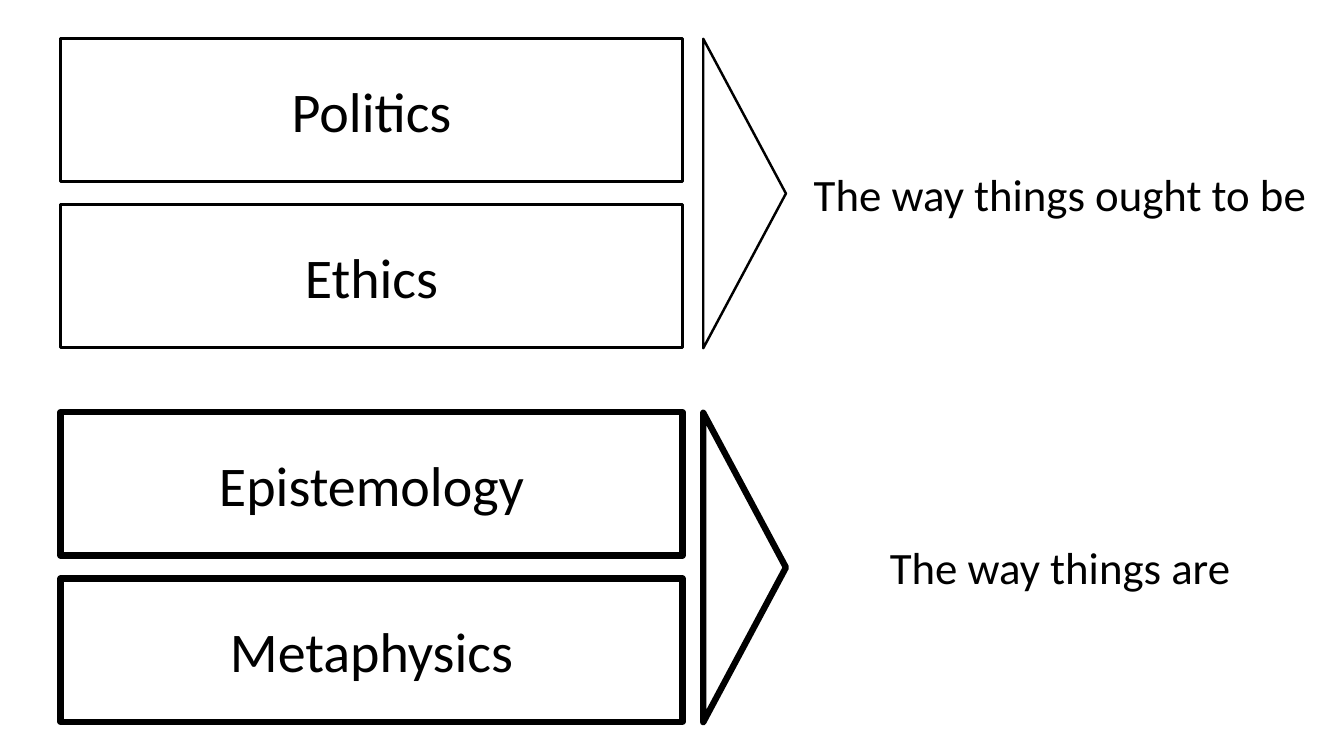
from pptx import Presentation
from pptx.dml.color import RGBColor
from pptx.enum.shapes import MSO_SHAPE
from pptx.enum.text import MSO_ANCHOR, PP_ALIGN
from pptx.util import Inches, Pt

RECT = MSO_SHAPE.RECTANGLE
TRIANGLE = MSO_SHAPE.ISOSCELES_TRIANGLE
MIDDLE, TOP = MSO_ANCHOR.MIDDLE, MSO_ANCHOR.TOP
CENTER = PP_ALIGN.CENTER

GROUPS = [
    (0.38, 1.75, ["Politics", "Ethics"], "The way things ought to be"),
    (4.09, 4.5, ["Epistemology", "Metaphysics"], "The way things are"),
]
BRANCH_STEP = 1.65


def color(value):
    return RGBColor.from_string(value)


class Deck:
    font = "Calibri"
    ink = "000000"

    def __init__(self, prs):
        self.s = prs.slides.add_slide(prs.slide_layouts[6])

    def add_text(self, sp, text, size, anchor):
        tf = sp.text_frame
        tf.word_wrap = True
        tf.vertical_anchor = anchor
        p = tf.paragraphs[0]
        p.alignment = CENTER
        r = p.add_run()
        r.text = text
        for name, value in {"name": self.font, "size": Pt(size)}.items():
            setattr(r.font, name, value)
        r.font.color.rgb = color(self.ink)

    def outline(self, kind, box, weight, rotation=0):
        sp = self.s.shapes.add_shape(kind, *map(Inches, box))
        sp.shadow.inherit = False
        sp.rotation = rotation
        sp.fill.background()
        sp.line.color.rgb = color(self.ink)
        sp.line.width = Pt(weight)
        return sp

    def branch(self, top, weight, text):
        sp = self.outline(RECT, (0.6, top, 6.17, 1.42), weight)
        self.add_text(sp, text, 40, MIDDLE)

    def pointer(self, top, weight):
        self.outline(TRIANGLE, (5.85, top, 3.07, 0.82), weight, 90)

    def label(self, top, text):
        sp = self.s.shapes.add_textbox(*map(Inches, (7.8, top, 5.43, 0.64)))
        self.add_text(sp, text, 32, TOP)


def main():
    prs = Presentation()
    prs.slide_width, prs.slide_height = Inches(13.33), Inches(7.5)
    deck = Deck(prs)
    for top, weight, branches, meaning in GROUPS:
        for i, text in enumerate(branches):
            deck.branch(top + i * BRANCH_STEP, weight, text)
        deck.pointer(top + 1.13, weight)
        deck.label(top + 1.22, meaning)
    prs.save("out.pptx")


if __name__ == "__main__":
    main()
